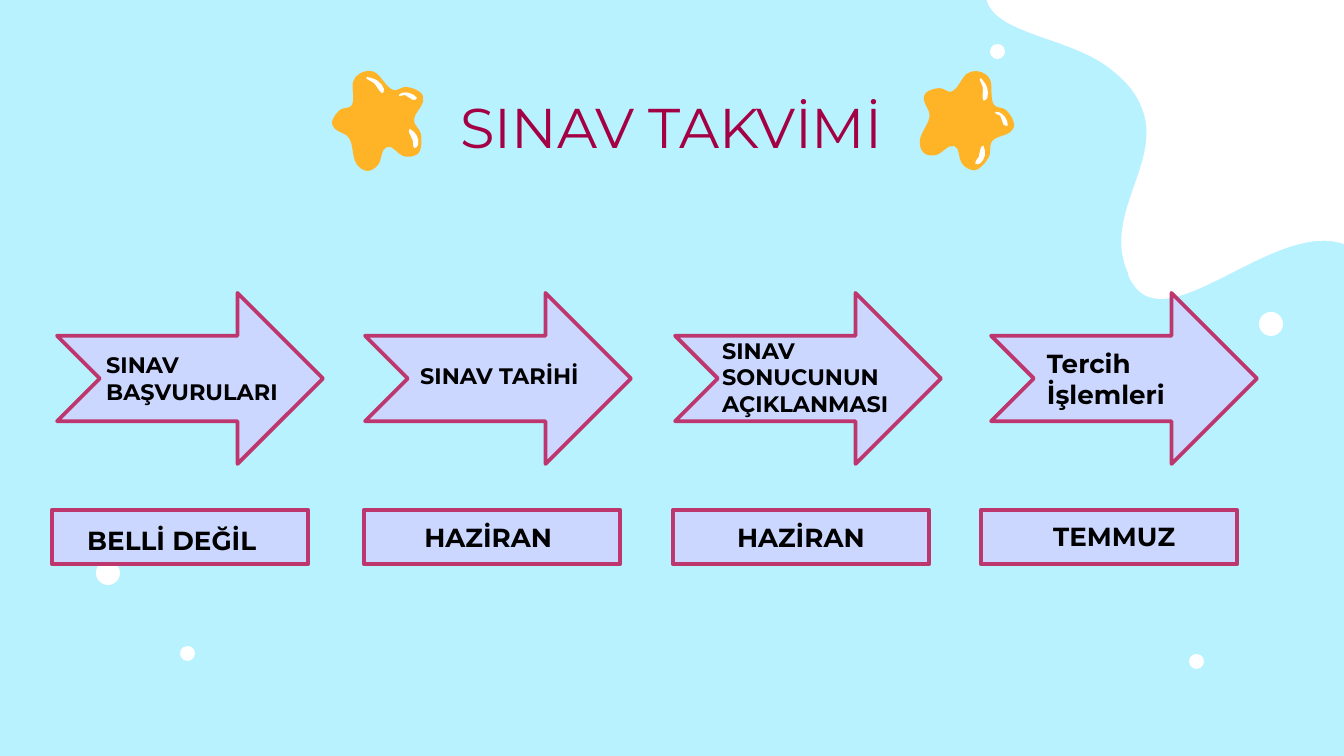
from math import cos, dist, hypot, radians, sin

from lxml.etree import SubElement
from pptx import Presentation
from pptx.dml.color import RGBColor
from pptx.enum.shapes import MSO_SHAPE
from pptx.enum.text import MSO_ANCHOR, PP_ALIGN
from pptx.oxml.ns import qn
from pptx.util import Pt

# Content; all lengths in px
WIDTH, HEIGHT = 1344, 756
EMU_PER_PX = 9144000 / WIDTH
FONT = "Montserrat"
COLORS = {"sky": "B8F2FF", "white": "FFFFFF", "star": "FFB428", "title": "A40044",
          "panel": "CBD7FF", "outline": "BD376E", "text": "000000"}

TITLE = ("SINAV TAKVİMİ", (105, 78, 1133, 97))

# Each step: arrow left, its text, size and separate text box (None: inside the arrow)
ARROW_TOP, ARROW_SIZE = 293, (266, 171)
STEPS = [
    (57, "SINAV BAŞVURULARI", 12, (93, 345, 238, 67)),
    (365, "SINAV TARİHİ", 12, (407, 356, 202, 40)),
    (675, "SINAV SONUCUNUN AÇIKLANMASI", 12, (709, 330, 242, 95)),
    (991, "Tercih İşlemleri", 14, None),
]

# Each date: bar left, its text, size and separate text box (None: inside the bar)
BAR_TOP, BAR_SIZE = 421, (348, 232)
DATES = [
    (6, "BELLİ DEĞİL", 14, (74, 518, 211, 46)),
    (318, "HAZİRAN ", 14, None),
    (627, "HAZİRAN", 14, None),
    (935, "TEMMUZ", 14, (1040, 514, 156, 46)),
]

# Dots: left, top, diameter
DOTS = [(1259, 312, 24), (1189, 654, 15), (990, 44, 15), (96, 561, 24), (180, 646, 15)]

# Cloud: start, then two handles and an end for each curve
CLOUD_TURN = 66.4
CLOUD = [
    (1534, -36),
    (1581, 73), (1566, 215), (1516, 324),
    (1496, 370), (1427, 542), (1367, 442),
    (1366, 439), (1364, 437), (1363, 435),
    (1343, 387), (1390, 310), (1372, 267),
    (1367, 257), (1357, 247), (1340, 243),
    (1271, 224), (1168, 339), (1133, 284),
    (1130, 280), (1128, 276), (1128, 273),
    (1101, 214), (1165, 161), (1141, 106),
    (1136, 94), (1128, 83), (1113, 71),
    (1074, 38), (1003, 36), (988, 4),
    (981, -13), (988, -39), (1021, -79),
    (1085, -161), (1245, -207), (1341, -187),
    (1441, -167), (1501, -110), (1534, -36),
]

# Star outlines, measured from the star's centre, as seen at the first star's turn
STAR_TURN = -10.5
STAR_BODY = [
    (-11, -48), (-3, -46), (14, -29), (27, -32), (42, -26), (44, -17), (35, 1),
    (42, 15), (41, 32), (35, 37), (24, 37), (8, 28), (-1, 46), (-12, 52), (-23, 44),
    (-30, 19), (-44, 10), (-47, 3), (-39, -9), (-27, -14), (-26, -37), (-20, -45),
]
STAR_GLINTS = [
    [(-12, -42), (-1, -38), (5, -30), (3, -26), (-5, -36), (-12, -40)],
    [(23, -26), (30, -26), (38, -21), (34, -19), (26, -24), (20, -23)],
    [(31, 10), (38, 17), (39, 26), (35, 29), (34, 22), (30, 13)],
]
STARS = [((379, 119), STAR_TURN), ((965, 119), 26.9)]  # centre, turn in degrees


def emu(px):
    return round(px * EMU_PER_PX)


def color(name):
    return RGBColor.from_string(COLORS[name])


def paint(shape, fill, outline=None):
    shape.shadow.inherit = False
    shape.fill.solid()
    shape.fill.fore_color.rgb = color(fill)
    if outline:
        shape.line.color.rgb = color(outline)
        shape.line.width = Pt(2)
    else:
        shape.line.fill.background()


def smooth(knots):
    """Start, then handle, handle, end for each curve of a closed smooth outline."""
    curves = [knots[0]]
    ring = [knots[-1], *knots, *knots[:2]]
    for a, b, c, d in zip(ring, ring[1:], ring[2:], ring[3:]):
        reach = dist(b, c) / 3
        leave, arrive = reach / dist(a, c), reach / dist(b, d)
        curves += [(b[0] + (c[0] - a[0]) * leave, b[1] + (c[1] - a[1]) * leave),
                   (c[0] - (d[0] - b[0]) * arrive, c[1] - (d[1] - b[1]) * arrive), c]
    return curves


def turned(point, degrees):
    c, s = cos(radians(degrees)), sin(radians(degrees))
    x, y = point
    return x * c - y * s, x * s + y * c


def add_curves(shapes, curves, fill, drawn_turn, turn, center=(0, 0)):
    upright = [turned(point, -drawn_turn) for point in curves]
    middle = [(min(axis) + max(axis)) / 2 for axis in zip(*upright)]
    origin = [c + t - m for c, t, m in zip(center, turned(middle, turn), middle)]
    corners = [(emu(x), emu(y)) for x, y in upright]
    builder = shapes.build_freeform(*corners[0])
    builder.add_line_segments(corners[1:], close=True)
    shape = builder.convert_to_shape(*map(emu, origin))
    shape.rotation = turn
    paint(shape, fill)
    # Every three line ends become one Bézier curve
    lines = list(shape._element.iter(qn("a:lnTo")))
    for first in range(0, len(lines), 3):
        curve = lines[first]
        curve_to = SubElement(curve.getparent(), qn("a:cubicBezTo"))
        curve.addprevious(curve_to)
        for line in lines[first:first + 3]:
            curve_to.append(line[0])
            line.getparent().remove(line)


def write(shape, text, size, align, name="text", bold=True):
    frame = shape.text_frame
    frame.word_wrap = True
    frame.text = text
    paragraph = frame.paragraphs[0]
    paragraph.alignment = align
    font = paragraph.runs[0].font
    font.name, font.size, font.bold = FONT, Pt(size), bold
    font.color.rgb = color(name)


def add_label(box, text, size, align=PP_ALIGN.LEFT, **style):
    label = slide.shapes.add_textbox(*map(emu, box))
    write(label, text, size, align, **style)
    return label


def add_row(preset, top, size, items, align):
    for left, text, points, box in items:
        shape = slide.shapes.add_shape(preset, *map(emu, (left, top, *size)))
        paint(shape, "panel", "outline")
        if box:
            add_label(box, text, points)
        else:
            write(shape, text, points, align)
            shape.text_frame.vertical_anchor = MSO_ANCHOR.MIDDLE


prs = Presentation()
prs.slide_width, prs.slide_height = emu(WIDTH), emu(HEIGHT)
slide = prs.slides.add_slide(prs.slide_layouts[6])
slide.background.fill.solid()
slide.background.fill.fore_color.rgb = color("sky")

# Cloud in the corner and dots
add_curves(slide.shapes, CLOUD, "white", CLOUD_TURN, CLOUD_TURN)
for left, top, diameter in DOTS:
    dot = slide.shapes.add_shape(MSO_SHAPE.OVAL, *map(emu, (left, top, diameter, diameter)))
    paint(dot, "white")

# Title between two stars
title = add_label(TITLE[1], TITLE[0], 30, PP_ALIGN.CENTER, name="title", bold=False)
title.text_frame.vertical_anchor = MSO_ANCHOR.MIDDLE
for center, turn in STARS:
    star = slide.shapes.add_group_shape()
    add_curves(star.shapes, smooth(STAR_BODY), "star", STAR_TURN, turn, center)
    for glint in STAR_GLINTS:
        add_curves(star.shapes, smooth(glint), "white", STAR_TURN, turn, center)

# Steps and their dates
add_row(MSO_SHAPE.NOTCHED_RIGHT_ARROW, ARROW_TOP, ARROW_SIZE, STEPS, PP_ALIGN.LEFT)
add_row(MSO_SHAPE.MATH_MINUS, BAR_TOP, BAR_SIZE, DATES, PP_ALIGN.CENTER)

prs.save("out.pptx")
